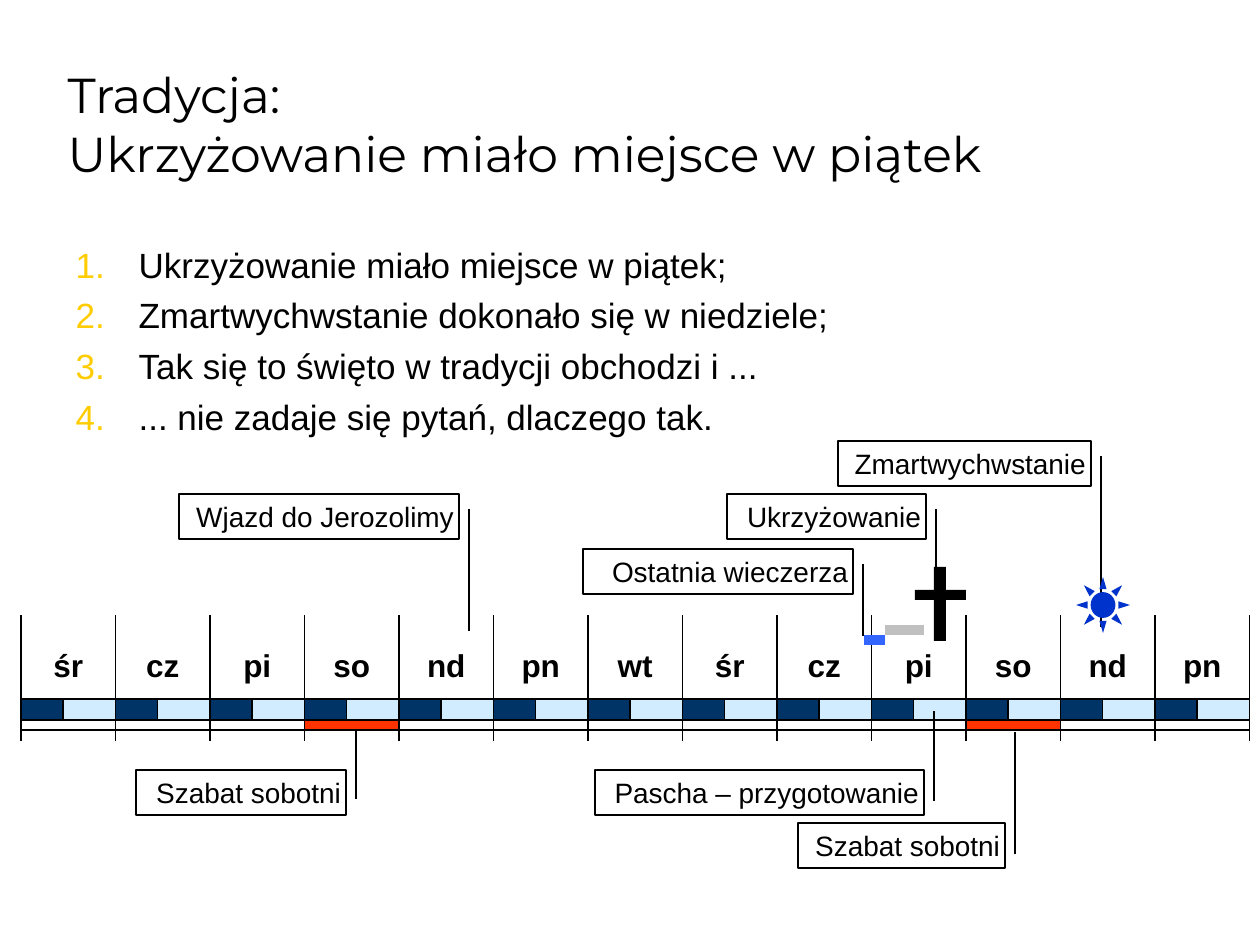
from dataclasses import dataclass

from lxml import etree
from pptx import Presentation
from pptx import util as u
from pptx.dml.color import RGBColor
from pptx.enum import shapes, text
from pptx.oxml.ns import qn


@dataclass(frozen=True)
class Theme:
    ink: RGBColor = RGBColor.from_string("000000")
    number: str = "FFCC00"
    night: RGBColor = RGBColor.from_string("003366")
    daylight: RGBColor = RGBColor.from_string("D1EBFF")
    sabbath: RGBColor = RGBColor.from_string("FF3300")
    sun: RGBColor = RGBColor.from_string("0033CC")
    supper: RGBColor = RGBColor.from_string("3366FF")
    trial: RGBColor = RGBColor.from_string("C0C0C0")
    heading_font: str = "Montserrat"
    body_font: str = "Arial"
    title_size: int = 28
    list_size: int = 20
    day_size: int = 18
    label_size: int = 16
    outline: float = 0.75


THEME = Theme()
SHAPE = shapes.MSO_SHAPE
SCALE = u.Inches(1) / 126


def px(*lengths):
    """Turn pixel lengths into EMU."""
    return [u.Emu(round(length * SCALE)) for length in lengths]


def add_box(parent, kind, frame, fill=None, outlined=True):
    """Add a preset shape at a pixel frame, without shadow."""
    box = parent.add_shape(kind, *px(*frame))
    box.shadow.inherit = False
    if fill is None:
        box.fill.background()
    else:
        box.fill.solid()
        box.fill.fore_color.rgb = fill
    if outlined:
        box.line.color.rgb = THEME.ink
        box.line.width = u.Pt(THEME.outline)
    else:
        box.line.fill.background()
    return box


deck = Presentation()
deck.slide_width, deck.slide_height = px(1260, 945)
page = deck.slides.add_slide(deck.slide_layouts[1])
title, body = page.placeholders

# Title and numbered list
title.left, title.top, title.width, title.height = px(55, 32, 1071, 157)
title.text_frame.text = "Tradycja:\vUkrzyżowanie miało miejsce w piątek"
title.text_frame.vertical_anchor = text.MSO_ANCHOR.BOTTOM
heading = title.text_frame.paragraphs[0]
heading.alignment = text.PP_ALIGN.LEFT
for line_break in heading._p.findall(qn("a:br")):
    etree.SubElement(line_break, qn("a:rPr"), sz=str(THEME.title_size * 100))

body.left, body.top, body.width, body.height = px(63, 231, 1126, 189)
body.text_frame.text = "\n".join([
    "Ukrzyżowanie miało miejsce w piątek;",
    "Zmartwychwstanie dokonało się w niedziele;",
    "Tak się to święto w tradycji obchodzi i ...",
    "... nie zadaje się pytań, dlaczego tak.",
])
body.text_frame.auto_size = text.MSO_AUTO_SIZE.NONE
body.text_frame.margin_top = px(12)[0]
for index, para in enumerate(body.text_frame.paragraphs):
    para.space_before = u.Pt(5 if index else 0)
    properties = para._p.get_or_add_pPr()
    properties.set("marL", str(px(63)[0]))
    properties.set("indent", str(px(-63)[0]))
    bullet_colour = etree.SubElement(properties, qn("a:buClr"))
    etree.SubElement(bullet_colour, qn("a:srgbClr"), val=THEME.number)
    etree.SubElement(properties, qn("a:buAutoNum"), type="arabicPeriod")

# Timeline of days: night and daylight band, sabbath strip below
days = ["śr", "cz", "pi", "so", "nd", "pn", "wt", "śr", "cz", "pi", "so", "nd", "pn"]
LEFT, DAY, NIGHT = 21, 189 / 2, 42
edges = [LEFT + index * DAY for index in range(len(days) + 1)]
day_labels = []
for left, day in zip(edges, days):
    band = page.shapes.add_group_shape().shapes
    add_box(band, SHAPE.RECTANGLE, (left, 699, NIGHT, 21), THEME.night)
    add_box(band, SHAPE.RECTANGLE, (left + NIGHT, 699, DAY - NIGHT, 21), THEME.daylight)
    label = page.shapes.add_textbox(*px(left, 646, DAY, 37))
    label.text_frame.text = day
    label.text_frame.word_wrap = True
    label.text_frame.vertical_anchor = text.MSO_ANCHOR.MIDDLE
    label.text_frame.margin_top = label.text_frame.margin_bottom = 0
    label.text_frame.paragraphs[0].alignment = text.PP_ALIGN.CENTER
    day_labels.append(label)

# Day borders, then the two bars of Thursday night
lines = [(edge, 741, edge, 615, THEME.ink, THEME.outline) for edge in edges]
lines += [
    (864, 640, 885, 640, THEME.supper, 6),
    (885, 630, 924, 630, THEME.trial, 6),
]
for *ends, colour, width in lines:
    line = page.shapes.add_connector(shapes.MSO_CONNECTOR.STRAIGHT, *px(*ends))
    line.line.color.rgb = colour
    line.line.width = u.Pt(width)
    etree.SubElement(line._element.spPr, qn("a:effectLst"))

for left, day in zip(edges, days):
    strip_fill = THEME.sabbath if day == "so" else None
    add_box(page.shapes, SHAPE.RECTANGLE, (left, 720, DAY, 10), strip_fill)

# Event callouts: text, left, top, width, pointer start below top, pointer tip
CALLOUT_HEIGHT, POINTER_GAP = 45, 10
events = [
    ("Wjazd do Jerozolimy", 179, 494, 280, 15, 631),
    ("Ostatnia wieczerza", 583, 549, 270, 15, 636),
    ("Ukrzyżowanie", 727, 494, 199, 15, 631),
    ("Zmartwychwstanie", 838, 441, 253, 15, 627),
    ("Szabat sobotni", 136, 770, 210, 29, 730),
    ("Szabat sobotni", 798, 823, 207, 31, 732),
    ("Pascha – przygotowanie", 595, 770, 329, 31, 711),
]
callouts = []
for event, left, top, width, start, tip in events:
    callout = add_box(page.shapes, SHAPE.LINE_CALLOUT_1, (left, top, width, CALLOUT_HEIGHT))
    callout._element.spPr.find(qn("a:xfrm")).set("flipH", "1")
    side = -POINTER_GAP / width
    pointer = [start / CALLOUT_HEIGHT, side, (tip - top) / CALLOUT_HEIGHT, side]
    for index, value in enumerate(pointer):
        callout.adjustments[index] = value
    frame = callout.text_frame
    frame.text = event
    frame.word_wrap = True
    frame.auto_size = text.MSO_AUTO_SIZE.SHAPE_TO_FIT_TEXT
    frame.vertical_anchor = text.MSO_ANCHOR.MIDDLE
    frame.margin_left = frame.margin_right = px(5)[0]
    frame.margin_top = frame.margin_bottom = px(5)[0]
    frame.paragraphs[0].alignment = text.PP_ALIGN.RIGHT
    callouts.append(callout)

# Sun and cross
sun = add_box(page.shapes, SHAPE.SUN, (1076, 577, 54, 56), THEME.sun, outlined=False)
sun.adjustments[0] = 0.27
cross = page.shapes.add_group_shape().shapes
for beam in [(934, 567, 12, 74), (915, 590, 51, 10)]:
    add_box(cross, SHAPE.RECTANGLE, beam, THEME.ink, outlined=False)

# Type
styles = [
    ([title], THEME.heading_font, THEME.title_size, False),
    ([body], THEME.body_font, THEME.list_size, False),
    (day_labels, THEME.body_font, THEME.day_size, True),
    (callouts, THEME.body_font, THEME.label_size, False),
]
for boxes, font, size, bold in styles:
    for box in boxes:
        for para in box.text_frame.paragraphs:
            for span in para.runs:
                span.font.name = font
                span.font.size = u.Pt(size)
                span.font.bold = bold
                span.font.color.rgb = THEME.ink

deck.save("out.pptx")
